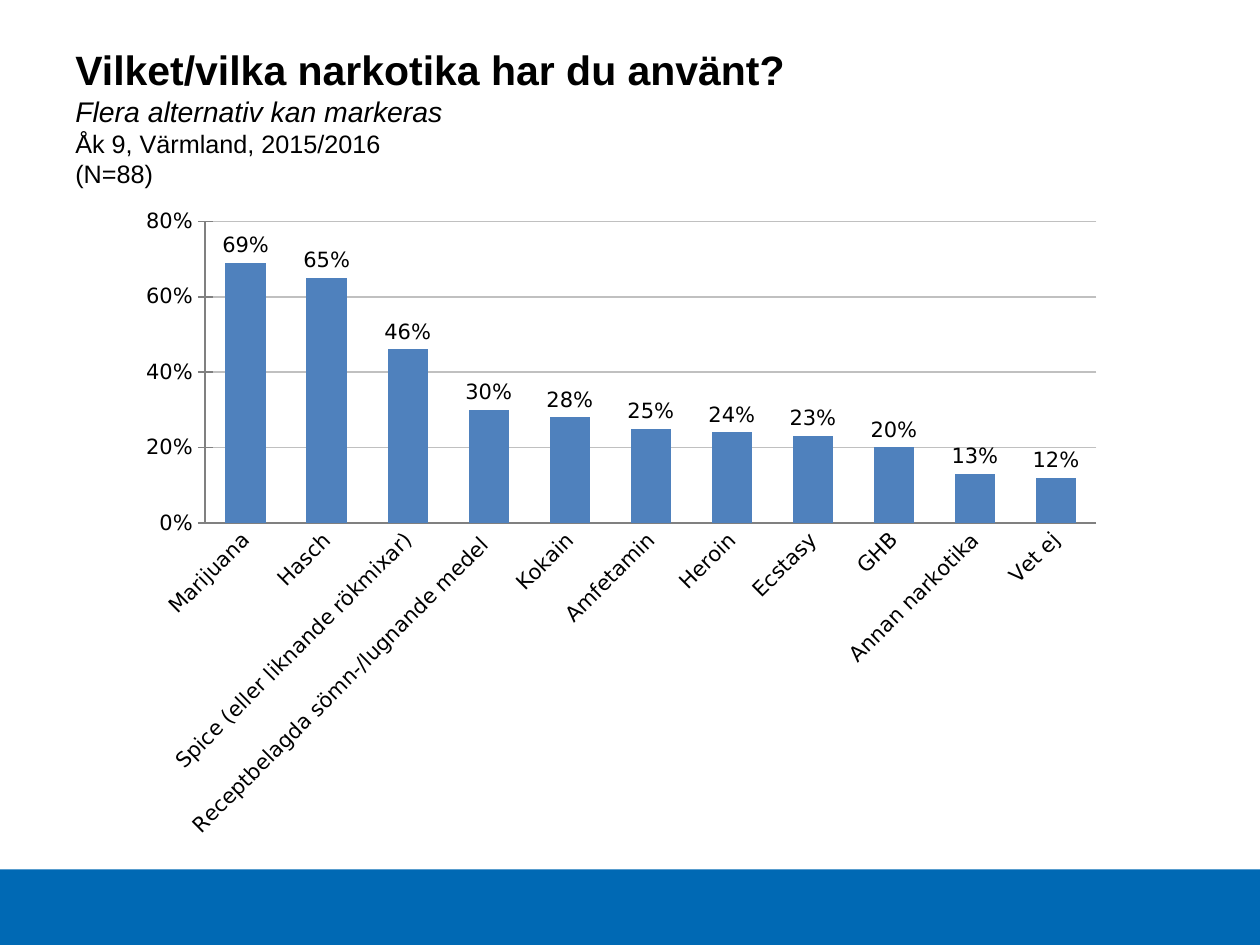
from lxml import etree
from pptx import Presentation
from pptx import util as u
from pptx.chart.data import CategoryChartData
from pptx.dml.color import RGBColor
from pptx.enum import chart as charts, shapes, text

C = "http://schemas.openxmlformats.org/drawingml/2006/chart"


def color(value):
    return RGBColor.from_string(value)


class SlideBuilder:
    """Style and current slide; places are given on a grid of 100 by 75 cells."""

    ink, band_blue, bar_blue = "000000", "0069B4", "4F81BD"
    grid_gray, axis_gray = "C0C0C0", "808080"
    text_font, chart_font, chart_size = "Arial", "DejaVu Sans", 12

    def __init__(self, deck):
        self.cell = deck.slide_width // 100
        self.slide = deck.slides.add_slide(deck.slide_layouts[6])

    def place(self, *cells):
        return [round(count * self.cell) for count in cells]

    def style(self, font, size, name):
        font.size, font.name = u.Pt(size), name
        font.color.rgb = color(self.ink)

    def band(self, *cells):
        band = self.slide.shapes.add_shape(shapes.MSO_SHAPE.RECTANGLE, *self.place(*cells))
        band.shadow.inherit = False
        band.fill.solid()
        band.fill.fore_color.rgb = color(self.band_blue)
        band.line.fill.background()

    def heading(self, lines, *cells):
        frame = self.slide.shapes.add_textbox(*self.place(*cells)).text_frame
        frame.word_wrap = True
        frame.vertical_anchor = text.MSO_ANCHOR.MIDDLE
        frame.text = "\n".join(line[0] for line in lines)
        for para, (_, size, bold, italic) in zip(frame.paragraphs, lines):
            for span in para.runs:
                self.style(span.font, size, self.text_font)
                span.font.bold, span.font.italic = bold, italic

    def column_chart(self, shares, plot_area, *cells):
        data = CategoryChartData(number_format="0%")
        data.categories = list(shares)
        data.add_series("Series 1", list(shares.values()))
        chart = self.slide.shapes.add_chart(
            charts.XL_CHART_TYPE.COLUMN_CLUSTERED, *self.place(*cells), data).chart
        chart.has_legend = chart.has_title = False
        self.style(chart.font, self.chart_size, self.chart_font)

        # Bars and their labels
        plot = chart.plots[0]
        plot.gap_width, plot.vary_by_categories = 100, False
        bars = plot.series[0]
        bars.format.fill.solid()
        bars.format.fill.fore_color.rgb = color(self.bar_blue)
        plot.has_data_labels = True
        labels = plot.data_labels
        labels.show_value = True
        labels.number_format, labels.number_format_is_linked = "0%", False
        labels.position = charts.XL_LABEL_POSITION.OUTSIDE_END
        self.style(labels.font, self.chart_size, self.chart_font)

        # Axes
        categories, values = chart.category_axis, chart.value_axis
        for axis, tick in ((categories, "NONE"), (values, "CROSS")):
            axis.major_tick_mark = charts.XL_TICK_MARK[tick]
            axis.minor_tick_mark = charts.XL_TICK_MARK.NONE
            self.style(axis.tick_labels.font, self.chart_size, self.chart_font)
            self.line(axis.format.line, self.axis_gray)
        values.minimum_scale, values.maximum_scale, values.major_unit = 0, 0.8, 0.2
        values.tick_labels.number_format = "0%"
        values.tick_labels.number_format_is_linked = False
        self.line(values.major_gridlines.format.line, self.grid_gray)

        # Slanted category names and a fixed plot area
        slant = categories._element.find(f"{{{C}}}txPr")[0]
        slant.set("rot", str(-45 * 60000))
        slant.set("vert", "horz")
        area = chart._chartSpace.chart.plotArea
        for old in area.findall(f"{{{C}}}layout"):
            area.remove(old)
        layout = etree.Element(f"{{{C}}}layout")
        manual = etree.SubElement(layout, f"{{{C}}}manualLayout")
        settings = [("layoutTarget", "inner"), ("xMode", "edge"), ("yMode", "edge")]
        for tag, value in settings + list(zip("xywh", plot_area)):
            etree.SubElement(manual, f"{{{C}}}{tag}").set("val", str(value))
        area.insert(0, layout)

    def line(self, line, shade):
        line.color.rgb = color(shade)
        line.width = u.Pt(1)


def main():
    deck = Presentation()
    deck.slide_width, deck.slide_height = u.Inches(10), u.Inches(7.5)
    page = SlideBuilder(deck)

    # Footer band
    page.band(0, 69, 100, 6)

    # Heading: text, size, bold, italic
    page.heading([
        ("Vilket/vilka narkotika har du använt?", 23.4, True, False),
        ("Flera alternativ kan markeras", 16.2, False, True),
        ("Åk 9, Värmland, 2015/2016", 14.4, False, False),
        ("(N=88)", 14.4, False, False),
    ], 5, 3, 86.6, 12.5)

    # Share of answers per drug
    page.column_chart({
        "Marijuana": 0.69,
        "Hasch": 0.65,
        "Spice (eller liknande rökmixar)": 0.46,
        "Receptbelagda sömn-/lugnande medel ": 0.3,
        "Kokain": 0.28,
        "Amfetamin": 0.25,
        "Heroin": 0.24,
        "Ecstasy": 0.23,
        "GHB": 0.2,
        "Annan narkotika": 0.13,
        "Vet ej": 0.12,
    }, (0.08, 0.04, 0.9, 0.46), 10, 15.5, 78.6, 52)

    deck.save("out.pptx")


if __name__ == "__main__":
    main()
